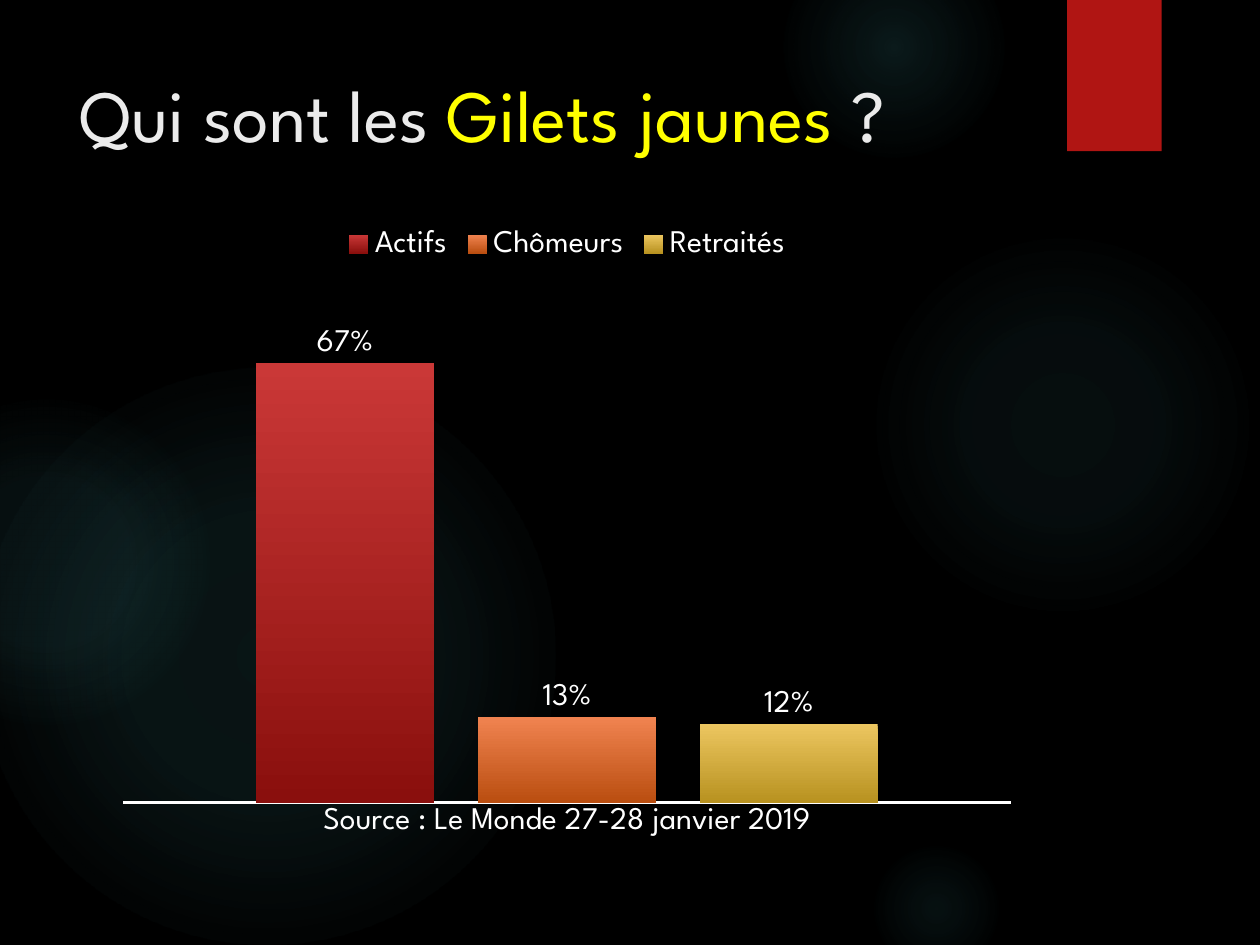
from pptx import Presentation
from pptx import util as u
from pptx.chart.data import CategoryChartData
from pptx.dml.color import RGBColor
from pptx.enum import chart as charts, shapes, text
from pptx.oxml import parse_xml
from pptx.oxml.ns import nsdecls, qn

BLACK = RGBColor(0x00, 0x00, 0x00)
WHITE = RGBColor(0xFF, 0xFF, 0xFF)
PALE = RGBColor(0xEB, 0xEB, 0xEB)
YELLOW = RGBColor(0xFF, 0xFF, 0x00)
RED = RGBColor(0xB0, 0x15, 0x13)
TEAL = RGBColor(0x50, 0xB9, 0xC1)

# Left, top, diameter, then (position %, opacity %) stops
GLOWS = [
    (6.89, 1.83, 3.08, [(0, 7), (36, 6), (69, 0)]),
    (6.22, -0.5, 1.75, [(0, 14), (36, 7), (73, 0)]),
    (6.89, 6.67, 1.08, [(0, 9), (36, 5), (66, 0)]),
    (-0.17, 2.92, 4.58, [(0, 11), (36, 10), (75, 0)]),
    (-0.92, 3.17, 2.58, [(0, 8), (36, 8), (72, 0)]),
]

# Name, value, top and bottom colour of the bar
SERIES = [
    ("Actifs", 0.67, RGBColor(0xCA, 0x38, 0x37), RGBColor(0x8A, 0x0F, 0x0D)),
    ("Chômeurs", 0.13, RGBColor(0xF0, 0x83, 0x50), RGBColor(0xBA, 0x4E, 0x10)),
    ("Retraités", 0.12, RGBColor(0xEC, 0xC6, 0x60), RGBColor(0xB8, 0x92, 0x20)),
]


def format_font(font, size=18, color=WHITE, name="League Spartan"):
    font.size = u.Pt(size)
    font.color.rgb = color
    font.name = name


def add_span(para, words, **style):
    span = para.add_run()
    span.text = words
    format_font(span.font, **style)


class SlideBuilder:
    def __init__(self, deck):
        self.page = deck.slides.add_slide(deck.slide_layouts[5])
        fill = self.page.background.fill
        fill.solid()
        fill.fore_color.rgb = BLACK

    def shape(self, kind, left, top, width, height):
        box = self.page.shapes.add_shape(
            kind, u.Inches(left), u.Inches(top), u.Inches(width), u.Inches(height))
        box.shadow.inherit = False
        box.line.fill.background()
        return box

    def glow(self, left, top, size, stops):
        circle = self.shape(shapes.MSO_SHAPE.OVAL, left, top, size, size)
        circle.fill.background()
        stop_xml = "".join(
            f'<a:gs pos="{pos * 1000}"><a:srgbClr val="{TEAL}">'
            f'<a:alpha val="{alpha * 1000}"/></a:srgbClr></a:gs>'
            for pos, alpha in stops)
        gradient = parse_xml(
            f'<a:gradFill {nsdecls("a")} rotWithShape="1"><a:gsLst>{stop_xml}</a:gsLst>'
            '<a:path path="circle"><a:fillToRect l="50000" t="50000" r="50000" b="50000"/>'
            '</a:path></a:gradFill>')
        properties = circle._element.spPr
        properties.replace(properties.find(qn("a:noFill")), gradient)

    def ribbon(self, left, top, width, height):
        box = self.shape(shapes.MSO_SHAPE.RECTANGLE, left, top, width, height)
        box.fill.solid()
        box.fill.fore_color.rgb = RED
        effects = box._element.spPr.find(qn("a:effectLst"))
        effects.append(parse_xml(
            f'<a:outerShdw {nsdecls("a")} blurRad="{u.Pt(3)}" dist="{u.Pt(2)}" dir="5400000">'
            f'<a:srgbClr val="{BLACK}"><a:alpha val="45000"/></a:srgbClr></a:outerShdw>'))

    def title(self, spans, left, top, width, height):
        title = self.page.shapes.title
        title.left, title.top = u.Inches(left), u.Inches(top)
        title.width, title.height = u.Inches(width), u.Inches(height)
        frame = title.text_frame
        frame.word_wrap = True
        frame.auto_size = text.MSO_AUTO_SIZE.NONE
        frame.vertical_anchor = text.MSO_ANCHOR.TOP
        para = frame.paragraphs[0]
        para.alignment = text.PP_ALIGN.LEFT
        for words, color in spans:
            add_span(para, words, size=42, color=color)
        # Bring the title in front of the background glows
        self.page.shapes._spTree.append(title._element)

    def column_chart(self, category, series_rows, left, top, width, height):
        data = CategoryChartData(number_format="0%")
        data.categories = [category]
        for name, value, *_ in series_rows:
            data.add_series(name, [value])
        chart = self.page.shapes.add_chart(
            charts.XL_CHART_TYPE.COLUMN_CLUSTERED, u.Inches(left), u.Inches(top),
            u.Inches(width), u.Inches(height), data).chart
        format_font(chart.font)
        chart.has_title = False
        chart.has_legend = True
        chart.legend.position = charts.XL_LEGEND_POSITION.TOP
        chart.legend.include_in_layout = False
        format_font(chart.legend.font)

        # Axes
        values = chart.value_axis
        values.visible = False
        values.has_major_gridlines = False
        values.minimum_scale, values.maximum_scale = 0, 0.8
        values.tick_labels.number_format = "0%"
        values.tick_labels.number_format_is_linked = False
        categories = chart.category_axis
        categories.major_tick_mark = charts.XL_TICK_MARK.NONE
        categories.format.line.color.rgb = WHITE
        categories.format.line.width = u.Pt(1.5)
        format_font(categories.tick_labels.font)

        # Bars and labels
        plot = chart.plots[0]
        plot.gap_width, plot.overlap = 150, -25
        plot.vary_by_categories = False
        for series, (_, _, *colors) in zip(plot.series, series_rows):
            fill = series.format.fill
            fill.gradient()
            fill.gradient_angle = 270
            for stop, color in zip(fill.gradient_stops, colors):
                stop.color.rgb = color
            labels = series.data_labels
            labels.show_value = True
            labels.number_format = "0%"
            labels.number_format_is_linked = False
            labels.position = charts.XL_LABEL_POSITION.OUTSIDE_END
            format_font(labels.font)


def main():
    deck = Presentation()
    deck.slide_width, deck.slide_height = u.Inches(10), u.Inches(7.5)
    builder = SlideBuilder(deck)

    # Background decoration
    for glow in GLOWS:
        builder.glow(*glow)
    builder.ribbon(8.47, 0, 0.75, 1.2)

    # Title and chart
    builder.title(
        [("Qui sont les ", PALE), ("Gilets jaunes ", YELLOW), ("?", PALE)],
        0.53, 0.5, 7.72, 1.53)
    builder.column_chart(
        "Source : Le Monde 27-28 janvier 2019", SERIES, 0.83, 1.7, 7.34, 5.04)

    deck.save("out.pptx")


if __name__ == "__main__":
    main()
